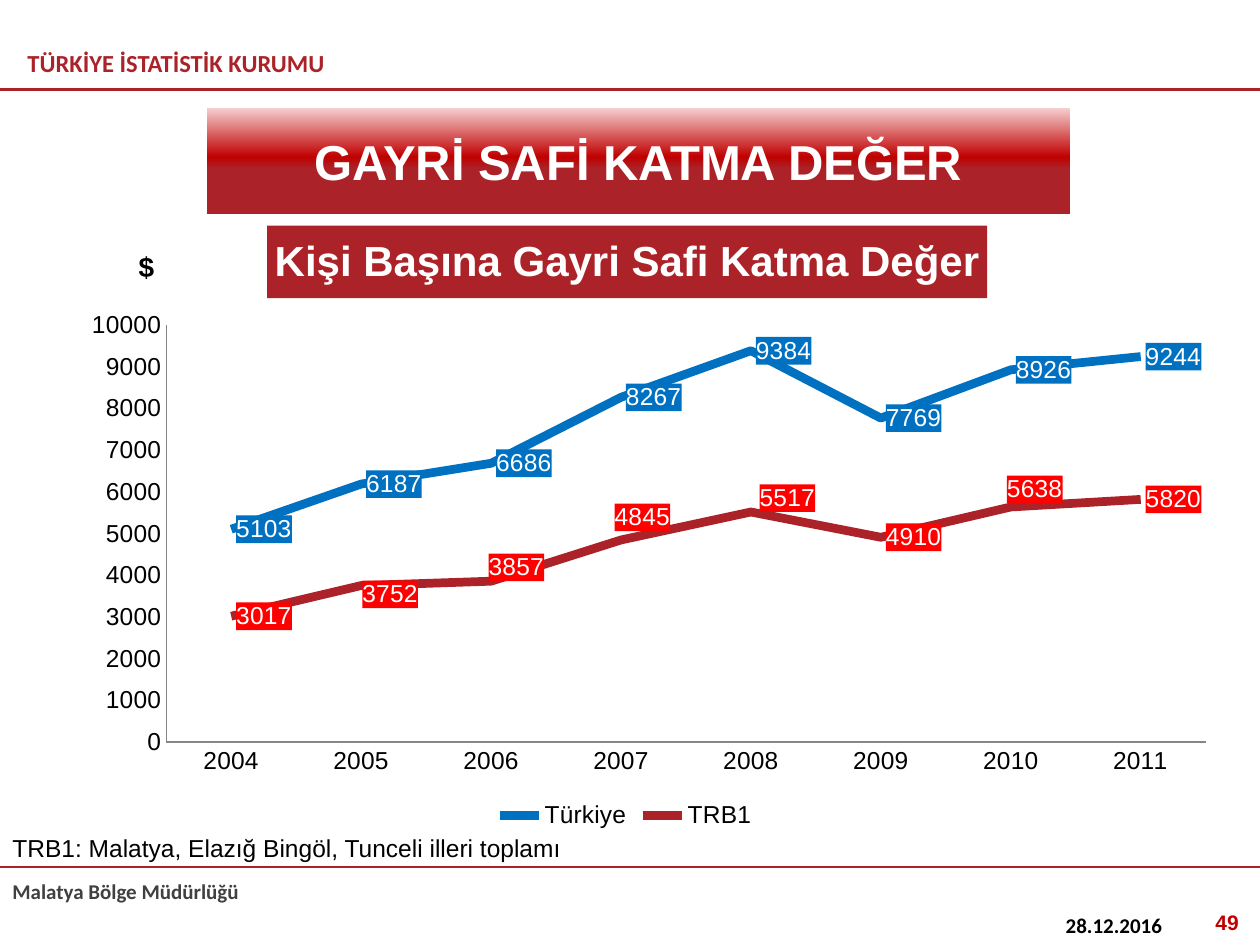
from pptx import Presentation
from pptx.chart.data import CategoryChartData
from pptx.dml.color import RGBColor
from pptx.enum.chart import XL_CHART_TYPE, XL_LABEL_POSITION, XL_LEGEND_POSITION, XL_TICK_MARK
from pptx.enum.shapes import MSO_CONNECTOR
from pptx.enum.text import MSO_ANCHOR, PP_ALIGN
from pptx.oxml import parse_xml
from pptx.oxml.ns import nsdecls, qn
from pptx.util import Inches, Pt

LINE_CHART = XL_CHART_TYPE.LINE
LABEL_RIGHT = XL_LABEL_POSITION.RIGHT
LEGEND_BOTTOM = XL_LEGEND_POSITION.BOTTOM
NO_TICK = XL_TICK_MARK.NONE
STRAIGHT = MSO_CONNECTOR.STRAIGHT
MIDDLE = MSO_ANCHOR.MIDDLE
LEFT, CENTER, RIGHT = PP_ALIGN.LEFT, PP_ALIGN.CENTER, PP_ALIGN.RIGHT

THEME = {
    "brand": "AB2328", "red": "C00000", "blue": "0070C0", "label_red": "FF0000",
    "black": "000000", "white": "FFFFFF", "dark": "404040", "axis": "868686",
    "sans": "Arial", "header": "Calibri",
    "banner": 28, "chart_title": 24, "unit": 16, "body": 14, "footer": 12,
}

TITLE = ("GAYRİ SAFİ KATMA DEĞER", (1.64, 0.86, 6.85, 0.84))
BANNER_STOPS = [(0, "F5CDCE"), (46, THEME["red"]), (57, THEME["brand"])]
RULE_TOPS = [0.71, 6.88]
TEXTS = [
    ("TÜRKİYE İSTATİSTİK KURUMU", (0.12, 0.33, 3.54, 0.39), "body", "header", "brand", True, LEFT),
    ("Malatya Bölge Müdürlüğü", (0, 6.92, 4.29, 0.32), "footer", "header", "dark", True, LEFT),
    ("28.12.2016", (8.36, 7.19, 1.6, 0.3), "footer", "header", "black", True, LEFT),
    ("49", (7.6, 7.17, 2.33, 0.3), "footer", "sans", "red", True, RIGHT),
    ("TRB1: Malatya, Elazığ Bingöl, Tunceli illeri toplamı", (0, 6.56, 6.41, 0.34),
     "body", "sans", "black", False, LEFT),
]

CHART_AREA = (0.16, 1.64, 9.61, 4.98)
CHART_TITLE = "Kişi Başına Gayri Safi Katma Değer"
UNIT = "$"
YEARS = [str(year) for year in range(2004, 2012)]
SERIES = [
    {"name": "Türkiye", "values": [5103, 6187, 6686, 8267, 9384, 7769, 8926, 9244],
     "line": "blue", "label": "blue", "shifts": {}},
    {"name": "TRB1", "values": [3017, 3752, 3857, 4845, 5517, 4910, 5638, 5820],
     "line": "brand", "label": "label_red",
     "shifts": {1: (-0.03, 0.07), 2: (-0.06, -0.11), 3: (-0.09, -0.18),
                4: (0.03, -0.11), 6: (-0.07, -0.14)}},
]
PLOT_AREA = (1.32, 2.58, 8.25, 3.31)
CHART_TITLE_AT = (2.12, 1.79)
UNIT_AT = (1.06, 1.94)


def color(name):
    return RGBColor.from_string(THEME[name])


def style(font, size, face="sans", ink="black", bold=False):
    font.size = Pt(THEME[size])
    font.name = THEME[face]
    font.bold = bold
    font.color.rgb = color(ink)


def write(frame, text, size, face, ink, bold, align):
    frame.text = text
    frame.word_wrap = True
    para = frame.paragraphs[0]
    para.alignment = align
    for span in para.runs:
        style(span.font, size, face, ink, bold)


def place(shape, area):
    shape.left, shape.top, shape.width, shape.height = map(Inches, area)


def add_banner(page):
    text, area = TITLE
    banner = page.shapes.title
    place(banner, area)
    banner.fill.gradient()
    banner.fill.gradient_angle = 270
    stops = "".join(f'<a:gs pos="{at * 1000}"><a:srgbClr val="{ink}"/></a:gs>'
                    for at, ink in BANNER_STOPS)
    old_stops = banner.element.find(".//" + qn("a:gsLst"))
    old_stops.getparent().replace(
        old_stops, parse_xml(f'<a:gsLst {nsdecls("a")}>{stops}</a:gsLst>'))
    write(banner.text_frame, text, "banner", "sans", "white", True, CENTER)
    banner.text_frame.vertical_anchor = MIDDLE


def add_rule(page, top, width):
    rule = page.shapes.add_connector(STRAIGHT, 0, Inches(top), width, Inches(top))
    rule.line.color.rgb = color("brand")
    rule.line.width = Pt(1.5)
    rule.element.spPr.append(parse_xml(f'<a:effectLst {nsdecls("a")}/>'))


def layout_xml(parts):
    body = "".join(f'<c:{tag} val="{value}"/>' for tag, value in parts)
    return parse_xml(f'<c:layout {nsdecls("c")}><c:manualLayout>{body}'
                     '</c:manualLayout></c:layout>')


def edge_layout(at, size=()):
    left, top, width, height = CHART_AREA
    parts = [("layoutTarget", "inner")] if size else []
    parts += [("xMode", "edge"), ("yMode", "edge"),
              ("x", round((at[0] - left) / width, 4)),
              ("y", round((at[1] - top) / height, 4))]
    if size:
        parts += [("w", round(size[0] / width, 4)), ("h", round(size[1] / height, 4))]
    return layout_xml(parts)


def set_layout(parent, layout, before):
    for old in parent.findall(qn("c:layout")):
        parent.remove(old)
    parent.find(qn(before)).addprevious(layout)


def add_title(owner, text, size, ink, at):
    title = owner.axis_title if hasattr(owner, "axis_title") else owner.chart_title
    write(title.text_frame, text, size, "sans", ink, True, CENTER)
    element = title.format.element if hasattr(title.format, "element") else title.element
    set_layout(element, edge_layout(at), "c:overlay")
    return title


def format_series(series, info):
    series.smooth = False
    series.format.line.color.rgb = color(info["line"])
    series.format.line.width = Pt(5)
    labels = series.data_labels
    labels.show_value = True
    style(labels.font, "body", ink="white")
    labels.position = LABEL_RIGHT
    for index, (across, down) in info["shifts"].items():
        label = series.points[index].data_label
        style(label.font, "body", ink="white")
        label.position = LABEL_RIGHT
    group = labels._element
    for point in group.findall(qn("c:dLbl")):
        idx = point.find(qn("c:idx"))
        across, down = info["shifts"][int(idx.get("val"))]
        idx.addnext(layout_xml([("x", round(across / CHART_AREA[2], 4)),
                                ("y", round(down / CHART_AREA[3], 4))]))
    for text in list(group.iter(qn("c:txPr"))):
        for old in text.getparent().findall(qn("c:spPr")):
            text.getparent().remove(old)
        text.addprevious(parse_xml(
            f'<c:spPr {nsdecls("c", "a")}><a:solidFill>'
            f'<a:srgbClr val="{THEME[info["label"]]}"/></a:solidFill></c:spPr>'))


def add_line_chart(page):
    data = CategoryChartData()
    data.categories = YEARS
    for info in SERIES:
        data.add_series(info["name"], info["values"])
    chart = page.shapes.add_chart(LINE_CHART, *map(Inches, CHART_AREA), data).chart
    style(chart.font, "body")
    chart.plots[0].vary_by_categories = False
    chart.has_legend = True
    chart.legend.position = LEGEND_BOTTOM
    chart.legend.include_in_layout = False
    style(chart.legend.font, "body")
    for axis in (chart.category_axis, chart.value_axis):
        axis.major_tick_mark = axis.minor_tick_mark = NO_TICK
        axis.has_major_gridlines = False
        axis.format.line.color.rgb = color("axis")
        style(axis.tick_labels.font, "body")
    values = chart.value_axis
    values.minimum_scale, values.maximum_scale, values.major_unit = 0, 10000, 1000
    for owner, text, size, ink, at in (
            (chart, CHART_TITLE, "chart_title", "white", CHART_TITLE_AT),
            (values, UNIT, "unit", "black", UNIT_AT)):
        title = owner.chart_title if owner is chart else owner.axis_title
        write(title.text_frame, text, size, "sans", ink, True, CENTER)
        set_layout(title._element, edge_layout(at), "c:overlay")
    chart.chart_title.format.fill.solid()
    chart.chart_title.format.fill.fore_color.rgb = color("brand")
    values.axis_title.text_frame._txBody.find(qn("a:bodyPr")).set("rot", "0")
    plot_area = chart.plots[0]._element.getparent()
    set_layout(plot_area, edge_layout(PLOT_AREA[:2], PLOT_AREA[2:]), "c:lineChart")
    for series, info in zip(chart.plots[0].series, SERIES):
        format_series(series, info)


def main():
    deck = Presentation()
    deck.slide_width, deck.slide_height = Inches(10), Inches(7.5)
    page = deck.slides.add_slide(deck.slide_layouts[5])
    for top in RULE_TOPS:
        add_rule(page, top, deck.slide_width)
    add_banner(page)
    for text, area, *look in TEXTS:
        box = page.shapes.add_textbox(*map(Inches, area))
        write(box.text_frame, text, *look)
    add_line_chart(page)
    deck.save("out.pptx")


if __name__ == "__main__":
    main()
